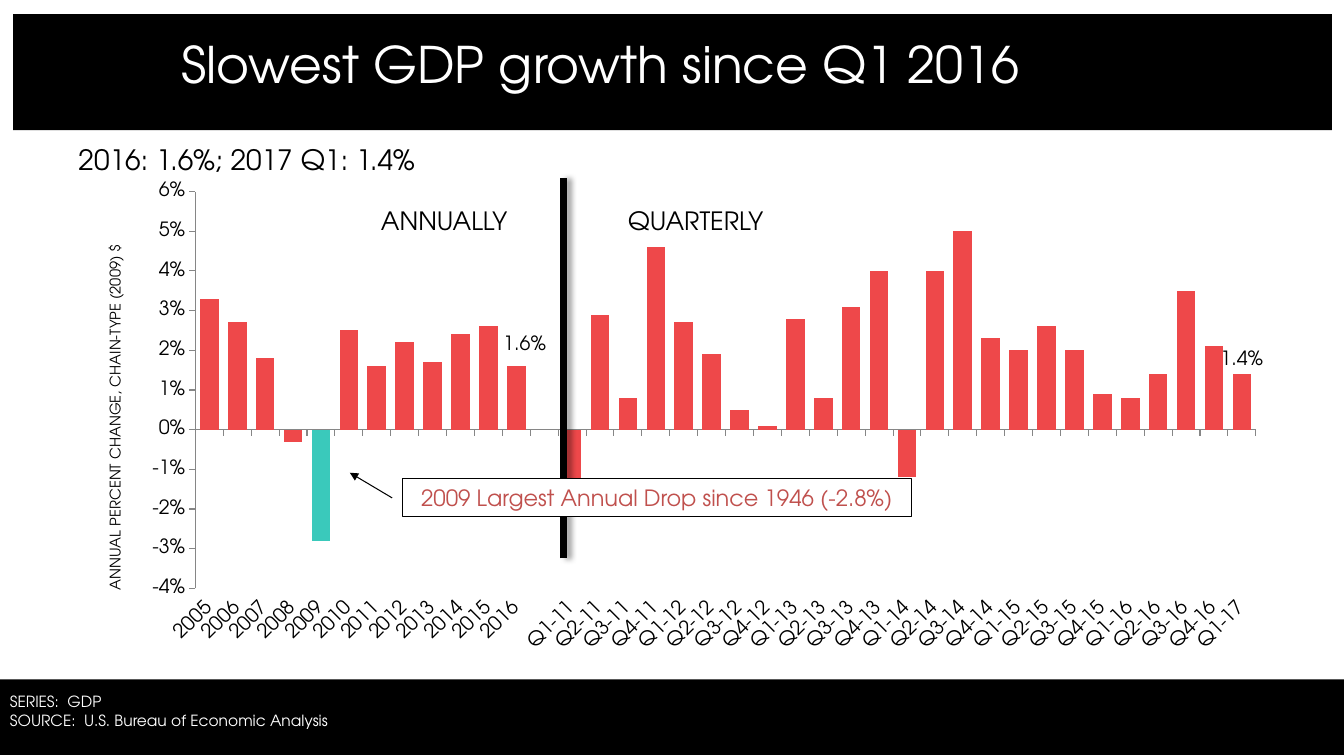
from dataclasses import dataclass

import pptx
import pptx.chart.data
import pptx.dml.color
import pptx.enum.chart
import pptx.enum.shapes
import pptx.enum.text
import pptx.oxml
import pptx.oxml.ns
import pptx.util
from pptx.util import Inches

ALIGN = pptx.enum.text.PP_ALIGN
ANCHOR = pptx.enum.text.MSO_ANCHOR


@dataclass(frozen=True)
class Theme:
    font: str = "TeX Gyre Adventor"
    black: str = "000000"
    white: str = "FFFFFF"
    axis: str = "868686"
    growth: str = "EE484A"
    drop: str = "3AC9BB"
    callout: str = "C0504D"
    title_size: float = 36
    subtitle_size: float = 20
    heading_size: float = 18
    callout_size: float = 16
    chart_size: float = 14
    source_size: float = 11
    axis_title_size: float = 10.5


THEME = Theme()

ANNUAL = [0.033, 0.027, 0.018, -0.003, -0.028, 0.025,
          0.016, 0.022, 0.017, 0.024, 0.026, 0.016]
QUARTERLY = [-0.015, 0.029, 0.008, 0.046, 0.027, 0.019, 0.005, 0.001, 0.028,
             0.008, 0.031, 0.040, -0.012, 0.040, 0.050, 0.023, 0.020, 0.026,
             0.020, 0.009, 0.008, 0.014, 0.035, 0.021, 0.014]
YEARS = [str(2005 + i) for i in range(len(ANNUAL))]
QUARTERS = [f"Q{i % 4 + 1}-{11 + i // 4}" for i in range(len(QUARTERLY))]


def rgb(color):
    return pptx.dml.color.RGBColor.from_string(color)


def xml(markup):
    """Parse one element, declaring its namespaces after the tag name."""
    tag, rest = markup.split(" ", 1)
    return pptx.oxml.parse_xml(f"{tag} {pptx.oxml.ns.nsdecls('a', 'c')} {rest}")


def style_font(font, size, color):
    font.name = THEME.font
    font.size = pptx.util.Pt(size)
    font.bold = False
    font.color.rgb = rgb(color)


def write_text(shape, text, *, size, color=THEME.black, align=ALIGN.LEFT,
               anchor=ANCHOR.TOP, spacing=1.0, wrap=True):
    frame = shape.text_frame
    frame.word_wrap = wrap
    frame.vertical_anchor = anchor
    frame.text = text
    for paragraph in frame.paragraphs:
        paragraph.alignment = align
        paragraph.line_spacing = spacing
        style_font(paragraph.font, size, color)


def add_text(slide, box, text, **text_format):
    write_text(slide.shapes.add_textbox(*map(Inches, box)), text, **text_format)


def add_box(slide, box, fill, outline=None):
    shape = slide.shapes.add_shape(
        pptx.enum.shapes.MSO_SHAPE.RECTANGLE, *map(Inches, box))
    shape.shadow.inherit = False
    shape.fill.solid()
    shape.fill.fore_color.rgb = rgb(fill)
    if outline:
        shape.line.color.rgb = rgb(outline)
        shape.line.width = pptx.util.Pt(0.75)
    else:
        shape.line.fill.background()
    return shape


def add_line(slide, start, end, width, arrow=False, shadow=False):
    line = slide.shapes.add_connector(
        pptx.enum.shapes.MSO_CONNECTOR.STRAIGHT, *map(Inches, start + end))
    line.line.color.rgb = rgb(THEME.black)
    line.line.width = pptx.util.Pt(width)
    if arrow:
        line.line._get_or_add_ln().append(xml('<a:tailEnd type="triangle"/>'))
    effects = xml("<a:effectLst />")
    if shadow:
        effects.append(xml(
            '<a:outerShdw blurRad="50800" dist="38100" dir="0" algn="l">'
            f'<a:srgbClr val="{THEME.black}"><a:alpha val="40000"/></a:srgbClr>'
            "</a:outerShdw>"))
    line._element.spPr.append(effects)


def manual_layout(**settings):
    items = "".join(f'<c:{k} val="{v}"/>' for k, v in settings.items())
    return xml(f"<c:layout ><c:manualLayout>{items}</c:manualLayout></c:layout>")


def style_axes(chart):
    low = pptx.enum.chart.XL_TICK_LABEL_POSITION.LOW
    for axis in (chart.category_axis, chart.value_axis):
        axis.has_major_gridlines = False
        axis.major_tick_mark = pptx.enum.chart.XL_TICK_MARK.OUTSIDE
        axis.minor_tick_mark = pptx.enum.chart.XL_TICK_MARK.NONE
        axis.format.line.color.rgb = rgb(THEME.axis)
        style_font(axis.tick_labels.font, THEME.chart_size, THEME.black)
    chart.category_axis.tick_label_position = low
    label_body = chart.category_axis._element.find(
        pptx.oxml.ns.qn("c:txPr")).find(pptx.oxml.ns.qn("a:bodyPr"))
    label_body.set("rot", "-2700000")
    label_body.set("vert", "horz")

    rate = chart.value_axis
    rate.minimum_scale, rate.maximum_scale = -0.04, 0.06
    rate.major_unit = 0.01
    rate.tick_labels.number_format = "0%"
    rate.tick_labels.number_format_is_linked = False
    title = rate.axis_title.text_frame
    title.text = "ANNUAL PERCENT CHANGE, CHAIN-TYPE (2009) $"
    style_font(title.paragraphs[0].runs[0].font,
               THEME.axis_title_size, THEME.black)


def add_growth_chart(slide):
    data = pptx.chart.data.CategoryChartData(number_format="0.0%")
    data.categories = YEARS + [""] + QUARTERS
    data.add_series("Series 1", ANNUAL + [None] + QUARTERLY)
    chart = slide.shapes.add_chart(
        pptx.enum.chart.XL_CHART_TYPE.COLUMN_CLUSTERED,
        *map(Inches, (0.68, 1.77, 11.98, 4.82)), data).chart
    chart.has_legend = False
    chart.has_title = False
    style_font(chart.font, THEME.chart_size, THEME.black)
    style_axes(chart)

    # Plot area
    plot_area = chart._chartSpace.chart.plotArea
    for layout in plot_area.findall(pptx.oxml.ns.qn("c:layout")):
        plot_area.remove(layout)
    plot_area.insert(0, manual_layout(
        layoutTarget="inner", xMode="edge", yMode="edge",
        x=0.105, y=0.027, w=0.878, h=0.817))

    # Columns, with the 2009 drop picked out
    plot = chart.plots[0]
    plot.gap_width = 50
    plot.vary_by_categories = False
    growth = plot.series[0]
    growth.invert_if_negative = False
    for part, color in ((growth, THEME.growth),
                        (growth.points[YEARS.index("2009")], THEME.drop)):
        part.format.fill.solid()
        part.format.fill.fore_color.rgb = rgb(color)

    # Labels on the latest year and the latest quarter
    growth.data_labels.show_value = False
    latest_year = len(ANNUAL) - 1
    for index in (latest_year, len(ANNUAL) + len(QUARTERLY)):
        label = growth.points[index].data_label
        style_font(label.font, THEME.chart_size, THEME.black)
        label.position = pptx.enum.chart.XL_LABEL_POSITION.OUTSIDE_END
        if index == latest_year:
            label._get_or_add_dLbl().insert(1, manual_layout(x=0.007, y=-0.016))


def main():
    presentation = pptx.Presentation()
    presentation.slide_width = Inches(13.33)
    presentation.slide_height = Inches(7.5)
    slide = presentation.slides.add_slide(presentation.slide_layouts[6])

    # Footer and title bands
    add_box(slide, (0, 6.74, 13.33, 0.75), THEME.black)
    add_box(slide, (0.13, 0.14, 13.08, 1.15), THEME.black)

    # Chart and headings
    add_growth_chart(slide)
    add_text(slide, (0.68, 1.4, 11.98, 0.4), "2016: 1.6%; 2017 Q1: 1.4%",
             size=THEME.subtitle_size, spacing=0.9)
    add_text(slide, (1.7, 0.33, 11.37, 0.67), "Slowest GDP growth since Q1 2016",
             size=THEME.title_size, color=THEME.white,
             anchor=ANCHOR.MIDDLE, spacing=0.9)

    # Divider between years and quarters
    add_line(slide, (5.59, 5.54), (5.59, 1.77), 4.5, shadow=True)
    for heading, left, width in (("ANNUALLY", 3.53, 1.75),
                                 ("QUARTERLY", 5.9, 2)):
        add_text(slide, (left, 1.99, width, 0.4), heading,
                 size=THEME.heading_size, align=ALIGN.CENTER)

    # Callout on the 2009 drop
    callout = add_box(slide, (3.99, 4.75, 5.05, 0.37), THEME.white, THEME.black)
    write_text(callout, "2009 Largest Annual Drop since 1946 (-2.8%)",
               size=THEME.callout_size, color=THEME.callout,
               align=ALIGN.CENTER, anchor=ANCHOR.MIDDLE)
    add_line(slide, (3.89, 4.94), (3.47, 4.69), 0.75, arrow=True)

    # Source
    add_text(slide, (0, 6.82, 3.39, 0.47),
             "SERIES:  GDP\nSOURCE:  U.S. Bureau of Economic Analysis",
             size=THEME.source_size, color=THEME.white, wrap=False)

    presentation.save("out.pptx")


if __name__ == "__main__":
    main()
